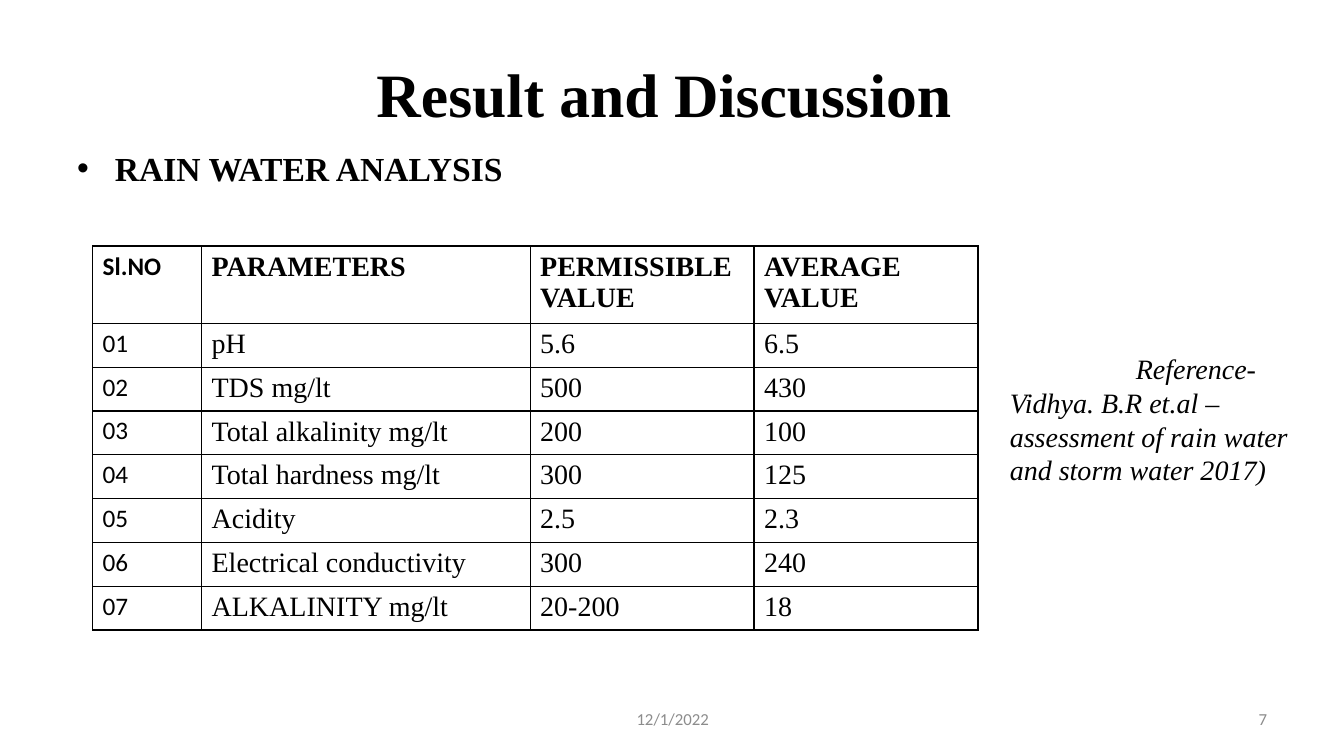
"""Build the rain water analysis results slide."""
from dataclasses import dataclass, field
from typing import Any

from lxml import etree
from pptx import Presentation
from pptx.dml.color import RGBColor
from pptx.enum import text
from pptx.oxml import ns
from pptx.util import Pt

ALIGN = text.PP_ALIGN
MID = text.MSO_ANCHOR.MIDDLE
TOP = text.MSO_ANCHOR.TOP


@dataclass(frozen=True)
class Theme:
    """Colours, fonts and type sizes."""
    ink: str = "000000"
    grey: str = "8C8C8C"
    paper: str = "FFFFFF"
    serif: str = "Times New Roman"
    sans: str = "Calibri"
    title: float = 44
    head: float = 24
    cell: float = 20
    count: float = 18
    foot: float = 12


THEME = Theme()


@dataclass(frozen=True)
class Style:
    """Look of one run of text."""
    size: float
    font: str = THEME.serif
    color: str = THEME.ink
    bold: bool = False
    italic: bool = False


@dataclass(frozen=True)
class Block:
    """One text box with a single paragraph, in points."""
    words: str
    at: tuple[float, float, float, float]
    style: Style
    align: Any = ALIGN.LEFT
    anchor: Any = TOP
    inset: float = 3.6
    line: float | None = None
    before: float = 0
    props: dict[str, float] = field(default_factory=dict)
    bullet: str = ""


FOOT = Style(THEME.foot, THEME.sans, THEME.grey)
BLOCKS = (
    Block("Result and Discussion ", (48, 21.6, 864, 90),
          Style(THEME.title, bold=True), ALIGN.CENTER, MID),
    Block("RAIN WATER ANALYSIS", (48, 102.2, 864, 380.2),
          Style(THEME.head, bold=True), before=4.8,
          props={"marL": 27, "indent": -27}, bullet="•"),
    Block("12/1/2022", (328.3, 500.4, 303.8, 28.8), FOOT,
          ALIGN.CENTER, MID, line=12.4, props={"marL": 0.7}),
    Block("7", (688.3, 500.4, 223.9, 28.8), FOOT,
          ALIGN.RIGHT, MID, line=12.4, props={"marL": 2.9}),
    Block("Reference- Vidhya. B.R et.al – assessment of rain water "
          "and storm water 2017)", (714.2, 223.9, 231.1, 172.1),
          Style(THEME.cell, italic=True), inset=27.4, props={"indent": 90}),
)
SPOT = (66.2, 175.7)
COLS = (77.8, 234.7, 160, 160)
HEAD, ROW = 54.8, 31.3
ROWS = (
    ("Sl.NO", "PARAMETERS", "PERMISSIBLE VALUE", "AVERAGE VALUE"),
    ("01", "pH", "5.6", "6.5"),
    ("02", "TDS mg/lt", "500", "430"),
    ("03", "Total alkalinity mg/lt", "200", "100"),
    ("04", "Total hardness mg/lt", "300", "125"),
    ("05", "Acidity", "2.5", "2.3"),
    ("06", "Electrical conductivity", "300", "240"),
    ("07", "ALKALINITY mg/lt", "20-200", "18"),
)


def write(para: Any, words: str, style: Style) -> None:
    """Add one styled run to a paragraph."""
    run = para.add_run()
    run.text = words
    font = run.font
    font.name, font.size = style.font, Pt(style.size)
    font.bold, font.italic = style.bold, style.italic
    font.color.rgb = RGBColor.from_string(style.color)


def draw(slide: Any, block: Block) -> None:
    """Draw one text block."""
    box = slide.shapes.add_textbox(*map(Pt, block.at))
    frame = box.text_frame
    frame.word_wrap = True
    frame.vertical_anchor = block.anchor
    frame.margin_top = Pt(block.inset)
    para = frame.paragraphs[0]
    para.alignment = block.align
    if block.line:
        para.line_spacing = Pt(block.line)
    if block.before:
        para.space_before = Pt(block.before)
    props = para._p.get_or_add_pPr()
    for name, size in block.props.items():
        props.set(name, str(int(Pt(size))))
    if block.bullet:
        face = etree.SubElement(props, ns.qn("a:buFont"))
        face.set("typeface", "Arial")
        mark = etree.SubElement(props, ns.qn("a:buChar"))
        mark.set("char", block.bullet)
    write(para, block.words, block.style)


def edge(cell: Any) -> None:
    """Rule all four sides of a cell."""
    props = cell._tc.get_or_add_tcPr()
    for spot, side in enumerate(("lnL", "lnR", "lnT", "lnB")):
        line = etree.Element(ns.qn(f"a:{side}"), w=str(int(Pt(1))))
        fill = etree.SubElement(line, ns.qn("a:solidFill"))
        etree.SubElement(fill, ns.qn("a:srgbClr"), val=THEME.ink)
        props.insert(spot, line)


def grid(slide: Any) -> None:
    """Draw the table of water values."""
    high = HEAD + ROW * (len(ROWS) - 1)
    frame = slide.shapes.add_table(
        len(ROWS), len(COLS), *map(Pt, (*SPOT, sum(COLS), high)))
    table = frame.table
    table.first_row = table.horz_banding = False
    for col, width in zip(table.columns, COLS):
        col.width = Pt(width)
    for i, (row, words) in enumerate(zip(table.rows, ROWS)):
        row.height = Pt(ROW if i else HEAD)
        for j, (cell, word) in enumerate(zip(row.cells, words)):
            cell.fill.solid()
            cell.fill.fore_color.rgb = RGBColor.from_string(THEME.paper)
            edge(cell)
            style = (Style(THEME.cell, bold=not i) if j
                     else Style(THEME.count, THEME.sans, bold=not i))
            write(cell.text_frame.paragraphs[0], word, style)


def main() -> None:
    """Build and save the slide."""
    deck = Presentation()
    deck.slide_width, deck.slide_height = Pt(960), Pt(540)
    slide = deck.slides.add_slide(deck.slide_layouts[6])
    for block in BLOCKS:
        draw(slide, block)
    grid(slide)
    deck.save("out.pptx")


if __name__ == "__main__":
    main()
